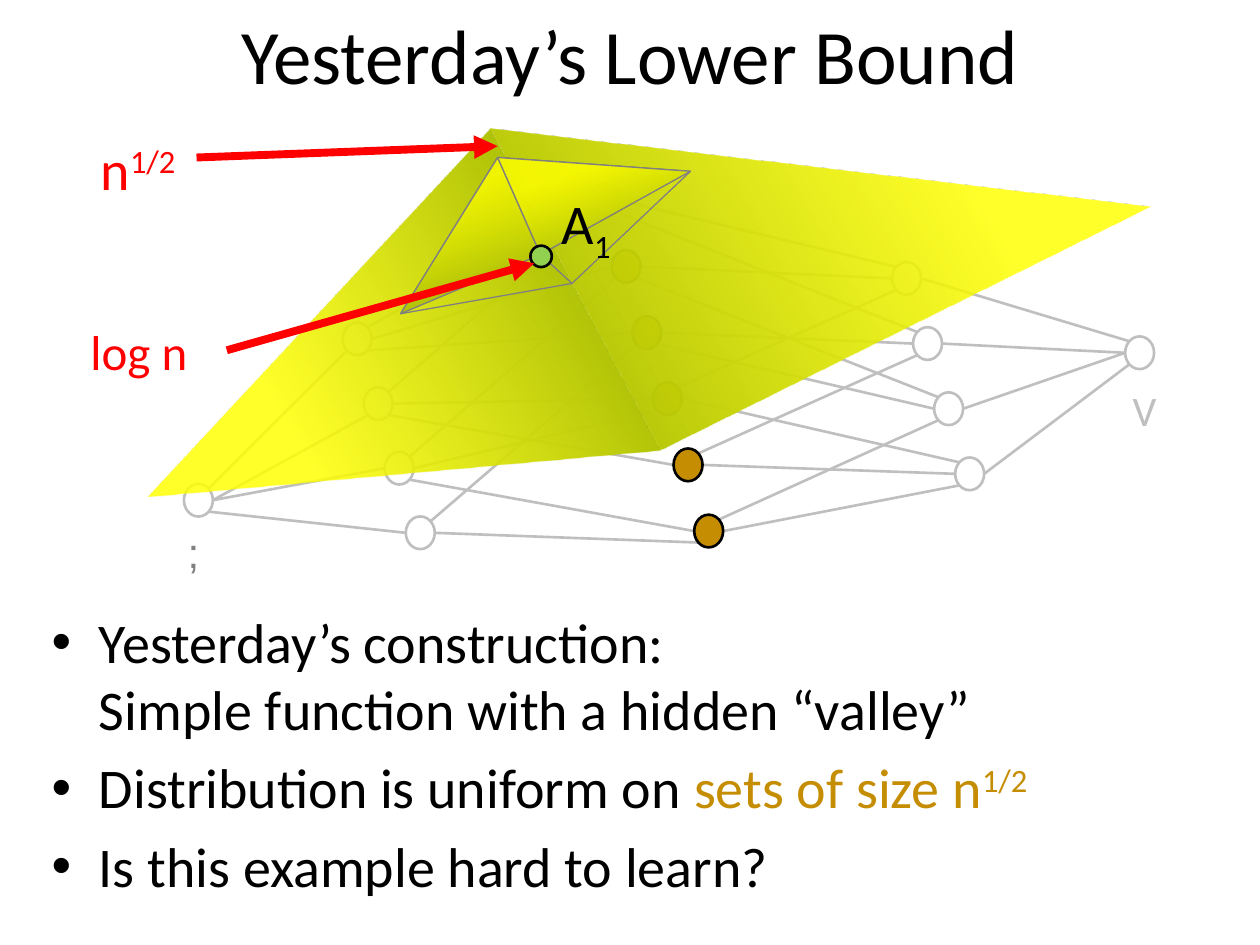
from lxml.etree import SubElement
from pptx import Presentation
from pptx.dml.color import RGBColor
from pptx.enum.shapes import MSO_CONNECTOR, MSO_SHAPE
from pptx.enum.text import MSO_ANCHOR, MSO_AUTO_SIZE, PP_ALIGN
from pptx.oxml.ns import qn
from pptx.util import Inches, Pt

COLORS = {
    "text": "000000", "gold": "C58D01", "faint": "BFBFBF", "grey": "808080",
    "red": "FF0000", "green": "92D050", "light": "FFFF00", "dark": "B1C309",
}
FONT = "Calibri"
COLUMNS, ROWS = 100, 75

TITLE = ("Yesterday’s Lower Bound", (5, 0, 90, 8.6))
BODY_BOX = (3.1, 47.7, 93.8, 25)
BULLETS = [
    [("Yesterday’s construction:", "text", 0),
     ("\n", "text", 0),
     ("Simple function with a hidden “valley”", "text", 0)],
    [("Distribution is uniform on ", "text", 0),
     ("sets of size n", "gold", 0), ("1/2", "gold", 30)],
    [("Is this example hard to learn?", "text", 0)],
]

NODE_SIZE = (2.3, 2.6)
LAYERS = {
    "s": (14.6, 38.4, 0, 0, 1),
    "a": (27.2, 25.6, 1.67, 5.13, 4),
    "b": (46.9, 14.6, 1.64, 5.25, 6),
    "c": (70.8, 20.8, 1.67, 5.17, 4),
    "t": (89.3, 26.7, 0, 0, 1),
}
SITES = {
    "left": (0, 0.5), "right": (1, 0.5),
    "top left": (0.15, 0.15), "top right": (0.85, 0.15),
    "bottom left": (0.15, 0.85), "bottom right": (0.85, 0.85),
}
EDGES = {
    "top right": "s0-a0:bottom left, a0-b0:left, a1-b0:bottom left, a2-b1:bottom left, "
                 "a3-b2:bottom left, b3-c0:bottom left, b4-c1:bottom left, b5-c2:bottom left",
    "right": "s0-a1:bottom left, s0-a2:left, a0-b1:left, a1-b3:left, a2-b3:bottom left, "
             "a3-b5:bottom left, b0-c0:top left, b1-c0:left, b2-c1:left, b3-c3:top left, "
             "b4-c3:left, b5-c3:bottom left, c0-t0:top left, c1-t0:left, c2-t0:left, "
             "c3-t0:bottom left",
    "bottom right": "s0-a3:left, a0-b2:left, a1-b4:left, a2-b5:left, b0-c1:top left, "
                    "b1-c2:top left, b2-c2:left",
}

PEAK, RIDGE_END = (38.9, 10.2), (52.4, 35.7)
VALLEY_TOP, VALLEY_LEFT = (39.5, 12.5), (31.8, 24.9)
VALLEY_RIGHT, VALLEY_FLOOR, VALLEY_EXIT = (54.8, 13.6), (42.9, 20.2), (45.4, 22.5)
SURFACES = [
    ([(11.7, 39.4), PEAK, RIDGE_END], 30, 76, None),
    ([(91.3, 16.4), RIDGE_END, PEAK], 210, 86, None),
    ([VALLEY_TOP, VALLEY_LEFT, VALLEY_EXIT, VALLEY_RIGHT], None, None, "grey"),
    ([VALLEY_TOP, VALLEY_FLOOR, VALLEY_LEFT], 290, 76, "grey"),
    ([VALLEY_TOP, VALLEY_FLOOR, VALLEY_RIGHT], 290, 76, "grey"),
]
ARROWS = [((15.6, 12.5), (39.5, 11.6)), ((18, 27.8), (42.4, 20.9))]
END_LABELS = [
    ([(";", "grey", 0)], (13.9, 41.3, 3.7, 5), 24, "Arial"),
    ([("V", "faint", 0)], (88.9, 30, 3.9, 5), 24, FONT),
]
CALLOUTS = [
    ([("A", "text", 0), ("1", "text", -25)], (43.6, 14.5, 6.1, 6.4), 32, FONT),
    ([("n", "red", 0), ("1/2", "red", 30)], (7, 10.2, 9.4, 6.4), 32, FONT),
    ([("log n", "red", 0)], (6.2, 25, 11.7, 5.7), 28, FONT),
]

presentation = Presentation()
presentation.slide_width, presentation.slide_height = Inches(10), Inches(7.5)
slide = presentation.slides.add_slide(presentation.slide_layouts[1])
CELLS = (presentation.slide_width / COLUMNS, presentation.slide_height / ROWS)


def to_slide(*values):
    return [round(value * CELLS[index % 2]) for index, value in enumerate(values)]


def color(name):
    return RGBColor.from_string(COLORS[name])


def place(shape, box):
    shape.left, shape.top, shape.width, shape.height = to_slide(*box)


def add_runs(paragraph, runs, size, font=FONT):
    for text, color_name, baseline in runs:
        if text == "\n":
            paragraph.add_line_break()
            continue
        run = paragraph.add_run()
        run.text = text
        run.font.name, run.font.size = font, Pt(size)
        run.font.color.rgb = color(color_name)
        if baseline:
            run.font._element.set("baseline", str(baseline * 1000))


def add_label(runs, box, size, font):
    label = slide.shapes.add_textbox(*to_slide(*box))
    label.text_frame.word_wrap = False
    label.text_frame.auto_size = MSO_AUTO_SIZE.SHAPE_TO_FIT_TEXT
    add_runs(label.text_frame.paragraphs[0], runs, size, font)


def add_line(start, end, color_name, width, arrow=False):
    line = slide.shapes.add_connector(MSO_CONNECTOR.STRAIGHT, *to_slide(*start, *end))
    line.line.color.rgb, line.line.width = color(color_name), Pt(width)
    if arrow:
        SubElement(line.line._get_or_add_ln(), qn("a:tailEnd"), type="triangle")
    SubElement(line._element.spPr, qn("a:effectLst"))


def add_circle(box, fill_name, line_name):
    circle = slide.shapes.add_shape(MSO_SHAPE.OVAL, *to_slide(*box))
    circle.shadow.inherit = False
    if fill_name:
        circle.fill.solid()
        circle.fill.fore_color.rgb = color(fill_name)
    else:
        circle.fill.background()
    circle.line.color.rgb, circle.line.width = color(line_name), Pt(1.5)


def add_surface(points, angle, dark_stop, line_name):
    corners = [to_slide(*point) for point in points]
    builder = slide.shapes.build_freeform(*corners[0])
    builder.add_line_segments(corners[1:], close=True)
    surface = builder.convert_to_shape()
    surface.shadow.inherit = False
    if line_name:
        surface.line.color.rgb, surface.line.width = color(line_name), Pt(0.75)
    else:
        surface.line.fill.background()
    if angle is None:
        surface.fill.background()
        return
    surface.fill.gradient()
    surface.fill.gradient_angle = angle
    stops = surface.fill.gradient_stops
    for stop, name, position in zip(stops, ("light", "dark"), (25, dark_stop)):
        stop.color.rgb, stop.position = color(name), position / 100
    light = surface._element.spPr.find(".//" + qn("a:srgbClr"))
    SubElement(light, qn("a:alpha"), val="83000")


title = slide.shapes.title
place(title, TITLE[1])
title.text_frame.vertical_anchor = MSO_ANCHOR.MIDDLE
title.text_frame.paragraphs[0].alignment = PP_ALIGN.CENTER
add_runs(title.text_frame.paragraphs[0], [(TITLE[0], "text", 0)], 44)

nodes = {
    f"{layer}{index}": (left + index * step_x, top + index * step_y)
    for layer, (left, top, step_x, step_y, count) in LAYERS.items()
    for index in range(count)
}


def site_point(node, site):
    return [start + size * share
            for start, size, share in zip(nodes[node], NODE_SIZE, SITES[site])]


for start_site, edges in EDGES.items():
    for edge in edges.split(", "):
        ends, end_site = edge.split(":")
        start, end = ends.split("-")
        add_line(site_point(start, start_site), site_point(end, end_site), "faint", 1.5)
for name, corner in nodes.items():
    fill_name, line_name = ("gold", "text") if name[0] == "b" else (None, "faint")
    add_circle((*corner, *NODE_SIZE), fill_name, line_name)
for label in END_LABELS:
    add_label(*label)

for surface in SURFACES:
    add_surface(*surface)
add_line(VALLEY_FLOOR, VALLEY_EXIT, "grey", 0.75)
add_circle((42.1, 19.5, 1.7, 1.7), "green", "text")

body = slide.placeholders[1]
place(body, BODY_BOX)
for index, runs in enumerate(BULLETS):
    frame = body.text_frame
    paragraph = frame.add_paragraph() if index else frame.paragraphs[0]
    if not index:
        paragraph.space_before = Pt(0)
    add_runs(paragraph, runs, 32)

for start, end in ARROWS:
    add_line(start, end, "red", 4.5, arrow=True)
for callout in CALLOUTS:
    add_label(*callout)

presentation.save("out.pptx")
